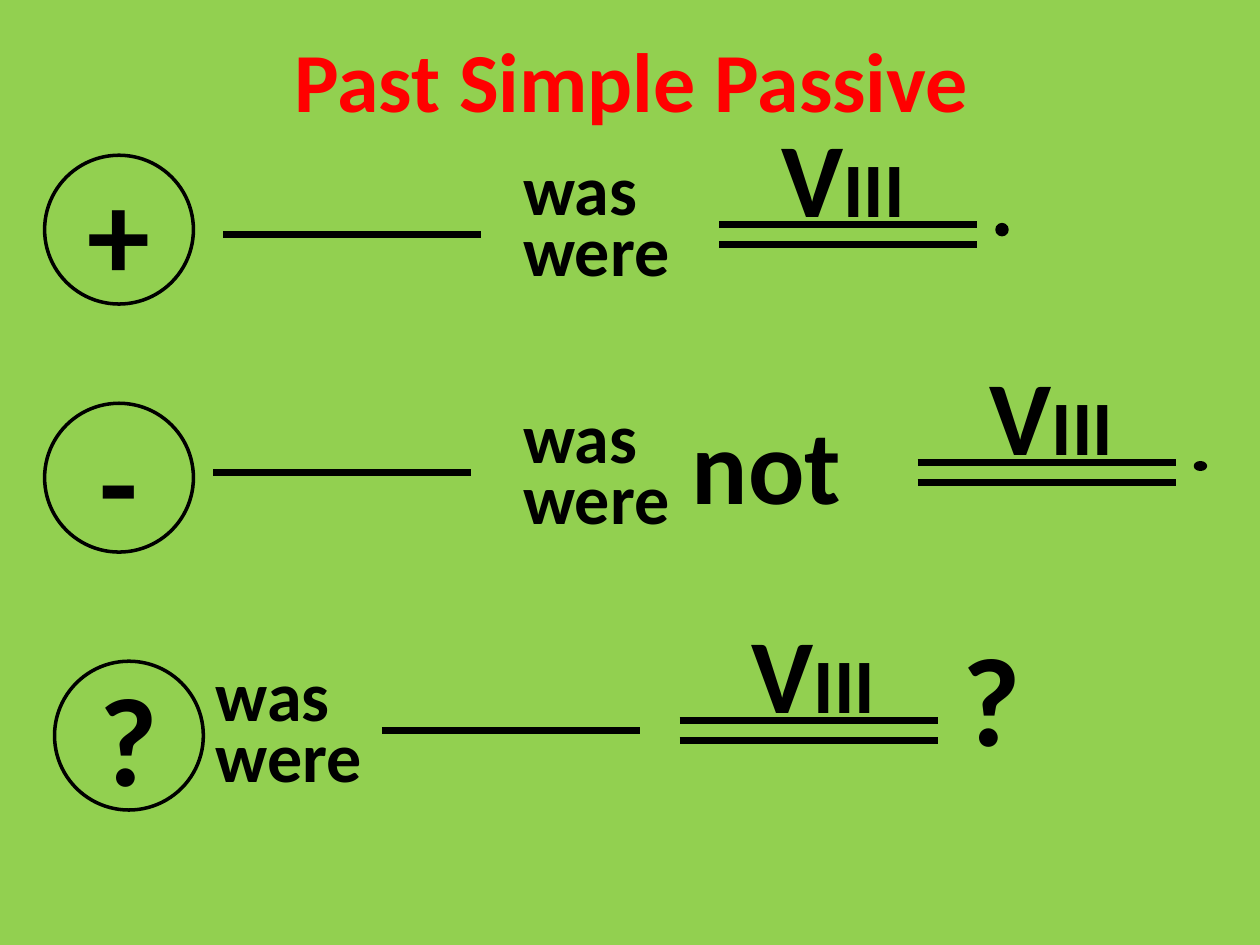
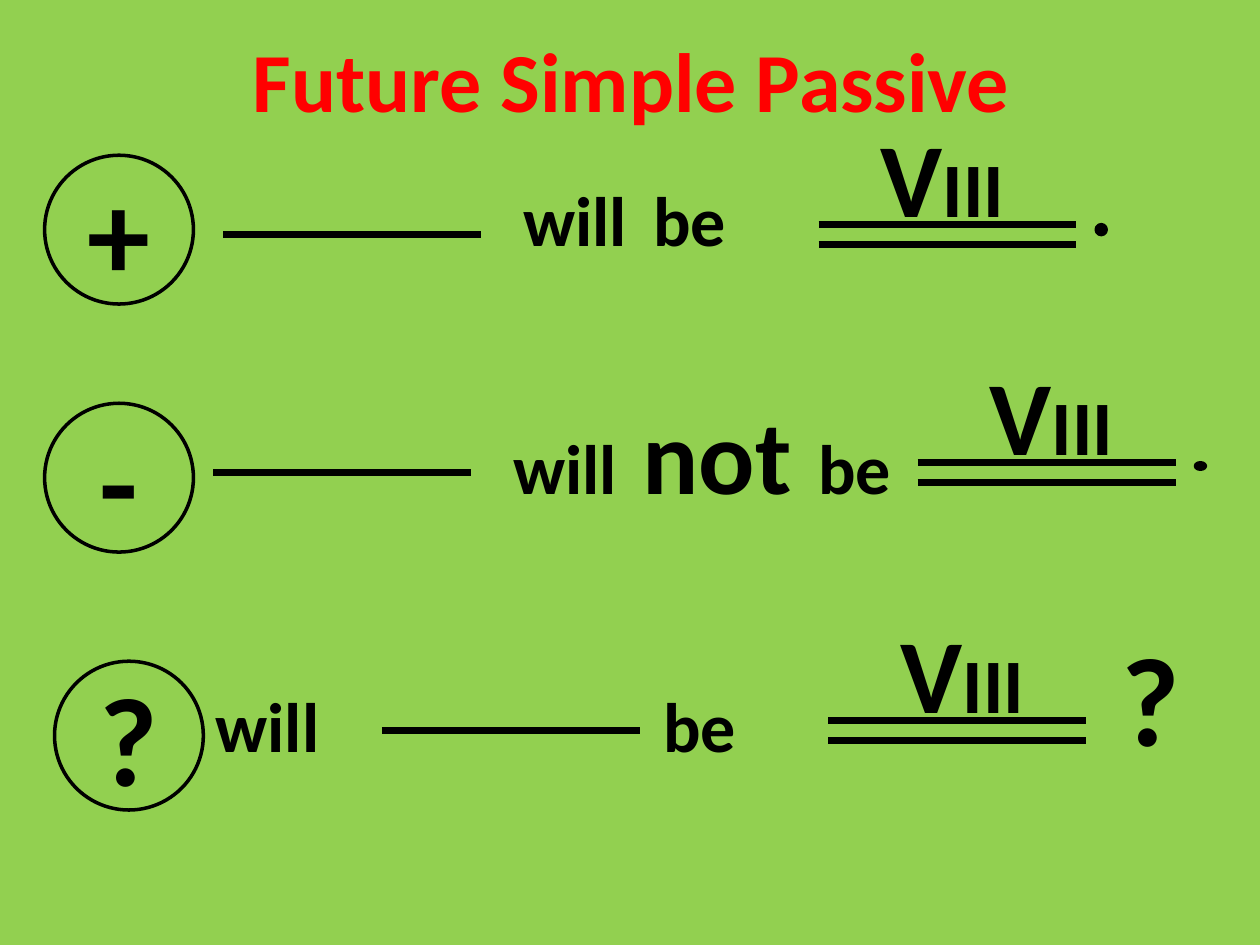
from dataclasses import dataclass

from lxml.etree import SubElement
from pptx import Presentation
from pptx.dml.color import RGBColor
from pptx.enum.shapes import MSO_CONNECTOR, MSO_SHAPE
from pptx.enum.text import MSO_ANCHOR, PP_ALIGN
from pptx.oxml.ns import qn
from pptx.shapes.autoshape import Shape
from pptx.slide import Slide
from pptx.util import Cm, Pt

FONT = "Calibri"
GREEN, RED, BLACK = "92D050", "FF0000", "000000"
RING = 3.0      # diameter of a sign circle
RULE = 5.2      # length of every rule
GAP = 0.4       # space between the two rules under the participle


@dataclass(frozen=True)
class Frame:
    """What a sentence type keeps on every slide; lengths in cm."""
    sign: str
    left: float
    top: float
    blank: float        # left end of the subject rule
    drop: float         # subject rule below the circle top
    rise: float         # upper participle rule below the circle top
    inset: float        # participle text box, from the rule start
    width: float
    dot: float = 0      # height of the full stop


@dataclass(frozen=True)
class Row:
    """The wording of a sentence type on one slide; lengths in cm."""
    verb: str
    left: float
    width: float
    third: float        # left end of the participle rules
    tab: float = 0
    no: tuple[float, float] | None = None    # left and top of "not"
    mark: float | None = None                # left of the closing "?"


@dataclass(frozen=True)
class Tense:
    title: str
    rows: tuple[Row, Row, Row]


FRAMES = (
    Frame("+", 0.9, 3.13, 4.5, 1.6, 1.4, -1.2, 7.4, dot=0.2),
    Frame("-", 0.9, 8.13, 4.3, 1.4, 1.2, -0.2, 5.8, dot=0.13),
    Frame("?", 1.1, 13.33, 7.7, 1.4, 1.2, -0.2, 5.8),
)

TENSES = (
    Tense("Past Simple Passive", (
        Row("was\nwere", 10.3, 6.2, 14.5),
        Row("was\nwere", 10.3, 6.2, 18.5, no=(13.7, 7.93)),
        Row("was\nwere", 4.1, 6.2, 13.7, mark=18.5),
    )),
    Tense("Future Simple Passive", (
        Row("will\tbe", 10.3, 6.2, 16.5, tab=2.62),
        Row("will\tbe", 10.1, 8.2, 18.5, tab=6.15, no=(12.7, 7.73)),
        Row("will\tbe", 4.1, 11.8, 16.7, tab=9.02, mark=21.7),
    )),
)


def paint(color: str) -> RGBColor:
    return RGBColor.from_string(color)


def style(shape: Shape, size: float, color: str = BLACK,
          align: PP_ALIGN = PP_ALIGN.CENTER) -> None:
    """Format all the text in a shape."""
    frame = shape.text_frame
    frame.word_wrap = True
    frame.vertical_anchor = MSO_ANCHOR.MIDDLE
    for para in frame.paragraphs:
        para.alignment = align
        for run in para.runs:
            font = run.font
            font.name, font.size, font.bold = FONT, Pt(size), True
            font.color.rgb = paint(color)


def write(slide: Slide, text: str, left: float, top: float, width: float,
          height: float, size: float,
          align: PP_ALIGN = PP_ALIGN.LEFT) -> Shape:
    box = slide.shapes.add_textbox(Cm(left), Cm(top), Cm(width), Cm(height))
    box.text_frame.text = text
    style(box, size, align=align)
    return box


def rule(slide: Slide, left: float, top: float) -> None:
    line = slide.shapes.add_connector(
        MSO_CONNECTOR.STRAIGHT, Cm(left), Cm(top), Cm(left + RULE), Cm(top))
    line.line.color.rgb = paint(BLACK)
    line.line.width = Pt(4)
    SubElement(line._element.spPr, qn("a:effectLst"))


def oval(slide: Slide, left: float, top: float, width: float, height: float,
         fill: bool = False, edge: bool = True, text: str = "") -> None:
    shape = slide.shapes.add_shape(
        MSO_SHAPE.OVAL, Cm(left), Cm(top), Cm(width), Cm(height))
    shape.shadow.inherit = False
    if fill:
        shape.fill.solid()
        shape.fill.fore_color.rgb = paint(BLACK)
    else:
        shape.fill.background()
    if edge:
        shape.line.color.rgb = paint(BLACK)
        shape.line.width = Pt(2)
    else:
        shape.line.fill.background()
    if text:
        shape.text_frame.text = text
        style(shape, 72)


def verb(slide: Slide, row: Row, top: float) -> None:
    box = write(slide, row.verb, row.left, top, row.width, 4.6, 40)
    for para in box.text_frame.paragraphs:
        para.line_spacing = Pt(35)
        if row.tab:
            tabs = SubElement(para._p.get_or_add_pPr(), qn("a:tabLst"))
            SubElement(tabs, qn("a:tab"), pos=str(Cm(row.tab)), algn="l")


def third(slide: Slide, frame: Frame, left: float, top: float) -> None:
    """Draw the third verb form above its double rule."""
    box = write(slide, "V", left + frame.inset, top - 2.4, frame.width, 2.8,
                60, PP_ALIGN.CENTER)
    tail = box.text_frame.paragraphs[0].add_run()
    tail.text = "III"
    style(box, 60)
    tail.font.size = Pt(44)
    for step in range(2):
        rule(slide, left, top + step * GAP)


def draw(slide: Slide, frame: Frame, row: Row) -> None:
    """Draw one sentence pattern."""
    top = frame.top
    high = top + frame.rise
    oval(slide, frame.left, top, RING, RING, text=frame.sign)
    rule(slide, frame.blank, top + frame.drop)
    verb(slide, row, top - 0.8)
    if row.no:
        write(slide, "not", *row.no, 5.8, 2.8, 60)
    third(slide, frame, row.third, high)
    if frame.dot:
        oval(slide, row.third + RULE + 0.4, high, 0.2, frame.dot, fill=True)
    if row.mark is not None:
        oval(slide, row.mark, top - 0.8, RING, RING, edge=False, text="?")


def head(slide: Slide, text: str) -> None:
    title = slide.shapes.title
    title.left, title.top = Cm(1.3), Cm(0)
    title.width, title.height = Cm(22.86), Cm(3.18)
    title.text_frame.text = text
    style(title, 48, RED)


def main() -> None:
    deck = Presentation()
    deck.slide_width, deck.slide_height = Cm(25.4), Cm(19.05)
    back = deck.slide_master.background.fill
    back.solid()
    back.fore_color.rgb = paint(GREEN)
    for tense in TENSES:
        slide = deck.slides.add_slide(deck.slide_layouts[5])
        head(slide, tense.title)
        for frame, row in zip(FRAMES, tense.rows):
            draw(slide, frame, row)
    deck.save("out.pptx")


if __name__ == "__main__":
    main()
